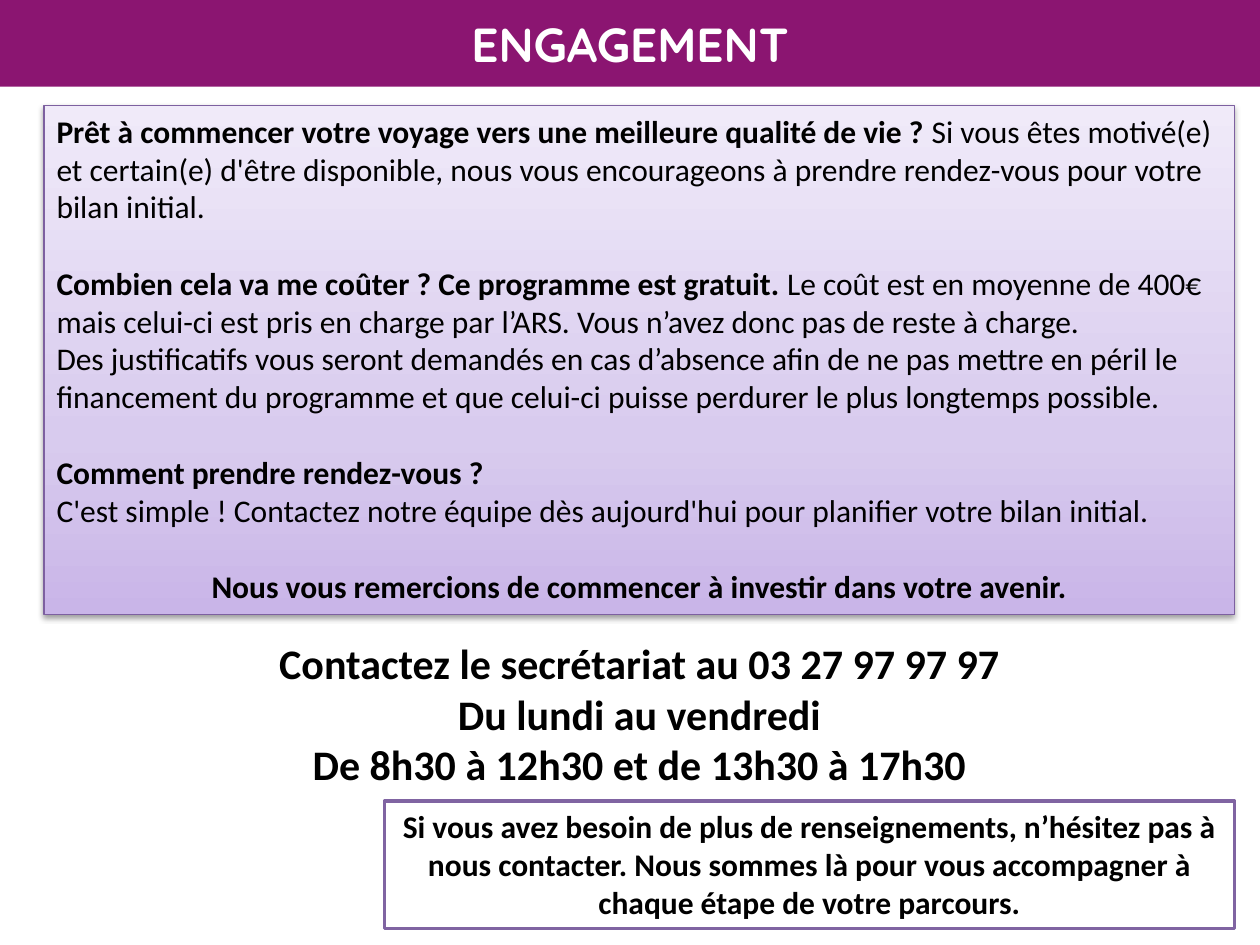
from copy import deepcopy
from lxml import etree
from pptx import Presentation
from pptx import util as u
from pptx.dml.color import RGBColor
from pptx.enum import shapes, text
from pptx.oxml.ns import qn


def rgb(h):
    return RGBColor.from_string(h)


def write(sp, paras, size, font="Calibri", color="000000"):
    """Fill a shape with paragraphs: (alignment, points before, [(words, bold)])."""
    tf = sp.text_frame
    tf.word_wrap = True
    tf.vertical_anchor = text.MSO_ANCHOR.TOP
    for i, (align, before, runs) in enumerate(paras):
        p = tf.paragraphs[0] if i == 0 else tf.add_paragraph()
        p.alignment = align
        p.space_before = u.Pt(before)
        for words, bold in runs:
            r = p.add_run()
            r.text = words
            r.font.size = u.Pt(size)
            r.font.name = font
            r.font.bold = bold
            r.font.color.rgb = rgb(color)
    return tf


LEFT, CENTER = text.PP_ALIGN.LEFT, text.PP_ALIGN.CENTER
RECT = shapes.MSO_SHAPE.RECTANGLE
GAP = 22  # one line of 18 pt text

prs = Presentation()
prs.slide_width, prs.slide_height = u.Cm(25.4), u.Cm(19.05)
s = prs.slides.add_slide(prs.slide_layouts[6])

# Title band
sp = s.shapes.add_shape(RECT, 0, 0, prs.slide_width, u.Cm(1.75))
sp.shadow.inherit = False
sp.fill.solid()
sp.fill.fore_color.rgb = rgb("8B1571")
sp.line.fill.background()
tf = write(sp, [(CENTER, 0, [("ENGAGEMENT", True)])], 27.3, "Quicksand", "FFFFFF")
tf.vertical_anchor = text.MSO_ANCHOR.MIDDLE

# Commitment panel
sp = s.shapes.add_shape(RECT, u.Cm(0.89), u.Cm(2.13), u.Cm(24), u.Cm(10.26))
sp.line.color.rgb = rgb("7D60A0")
sp.line.width = u.Pt(0.75)

# Three-stop gradient, dark at the bottom
sp.fill.gradient()
sp.fill.gradient_angle = 90
stops = sp._element.spPr.find(".//" + qn("a:gsLst"))
stops.insert(1, deepcopy(stops[0]))
for stop, (pos, color) in zip(sp.fill.gradient_stops,
                              [(0, "C9B5E8"), (0.35, "D8CBEE"), (1, "F0EAF9")]):
    stop.position = pos
    stop.color.rgb = rgb(color)

# Soft shadow under the panel
sp.shadow.inherit = False
effects = sp._element.spPr.find(qn("a:effectLst"))
shadow = etree.SubElement(effects, qn("a:outerShdw"), blurRad="40000",
                          dist="20000", dir="5400000", rotWithShape="0")
black = etree.SubElement(shadow, qn("a:srgbClr"), val="000000")
etree.SubElement(black, qn("a:alpha"), val="38000")

write(sp, [
    (LEFT, 0, [
        ("Prêt à commencer votre voyage vers une meilleure qualité de vie ? ", True),
        ("Si vous êtes motivé(e) et certain(e) d'être disponible, nous vous encourageons "
         "à prendre rendez-vous pour votre bilan initial.", False)]),
    (LEFT, GAP, [
        ("Combien cela va me coûter ? Ce programme est gratuit. ", True),
        ("Le coût est en moyenne de 400€ mais celui-ci est pris en charge par l’ARS. "
         "Vous n’avez donc pas de reste à charge.", False)]),
    (LEFT, 0, [
        ("Des justificatifs vous seront demandés en cas d’absence afin de ne pas mettre "
         "en péril le financement du programme et que celui-ci puisse perdurer le plus "
         "longtemps possible.", False)]),
    (LEFT, GAP, [("Comment prendre rendez-vous ?", True)]),
    (LEFT, 0, [("C'est simple ! Contactez notre équipe dès aujourd'hui pour planifier "
                "votre bilan initial.", False)]),
    (CENTER, GAP, [("Nous vous remercions de commencer à investir dans votre avenir.", True)]),
], 18)

# Contact details
sp = s.shapes.add_textbox(u.Cm(0.89), u.Cm(12.73), u.Cm(24), u.Cm(3.33))
write(sp, [(CENTER, 0, [(line, True)]) for line in (
    "Contactez le secrétariat au 03 27 97 97 97",
    "Du lundi au vendredi",
    "De 8h30 à 12h30 et de 13h30 à 17h30",
)], 24)

# Further information box
sp = s.shapes.add_shape(RECT, u.Cm(7.75), u.Cm(16.15), u.Cm(17.14), u.Cm(2.57))
sp.shadow.inherit = False
sp.fill.solid()
sp.fill.fore_color.rgb = rgb("FFFFFF")
sp.line.color.rgb = rgb("8064A2")
sp.line.width = u.Pt(2)
write(sp, [(CENTER, 0, [
    ("Si vous avez besoin de plus de renseignements, n’hésitez pas à nous contacter. "
     "Nous sommes là pour vous accompagner à chaque étape de votre parcours.", True)])], 18)

prs.save("out.pptx")
